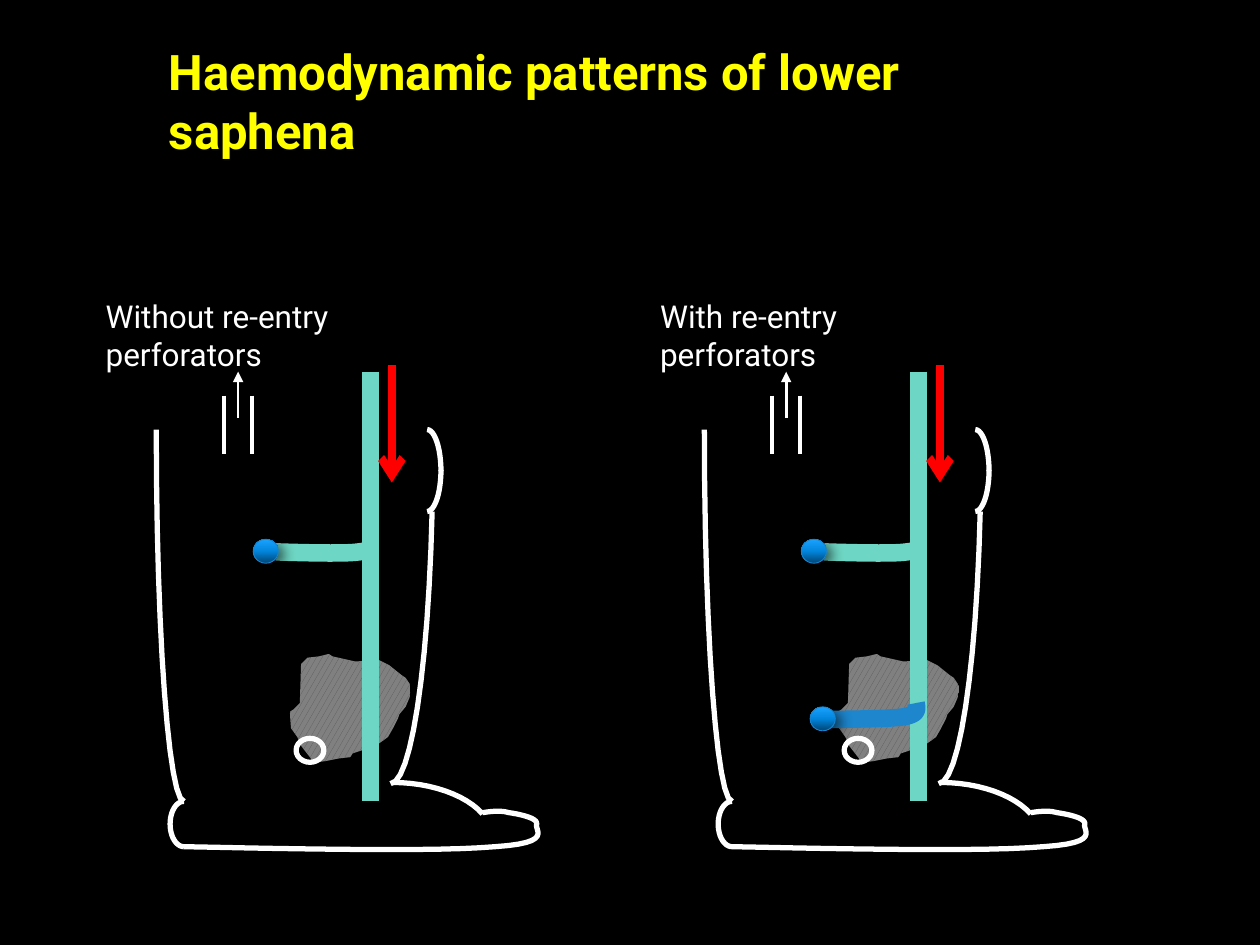
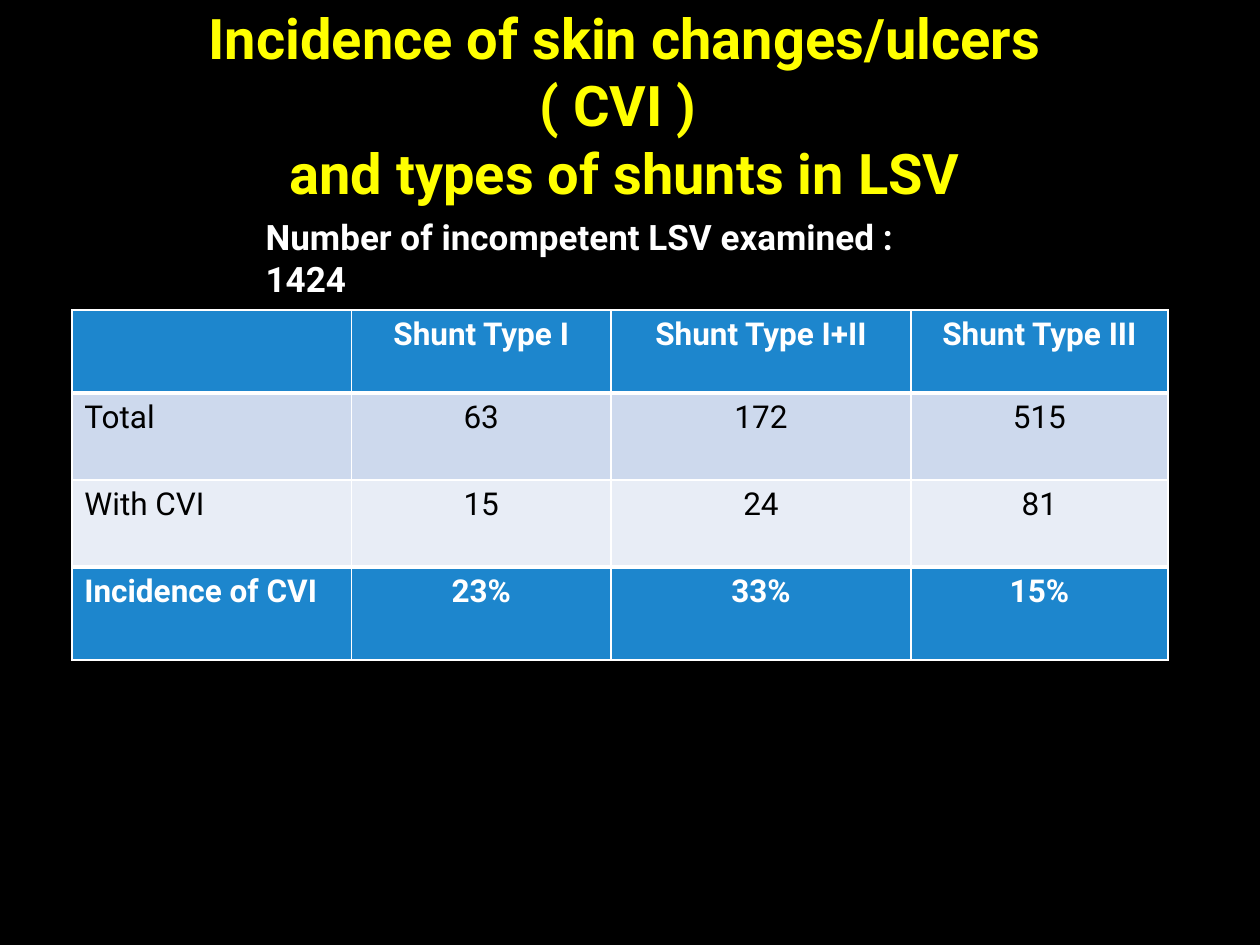
from copy import deepcopy

from lxml import etree
from pptx import Presentation
from pptx.dml.color import RGBColor
from pptx.enum.dml import MSO_PATTERN
from pptx.enum.shapes import MSO_CONNECTOR, MSO_SHAPE
from pptx.enum.text import MSO_ANCHOR, MSO_AUTO_SIZE, PP_ALIGN
from pptx.oxml.ns import qn
from pptx.util import Inches, Pt

BLACK, WHITE, YELLOW, RED = "000000", "FFFFFF", "FFFF00", "FF0000"
TEAL, BLUE = "6ED6C4", "1D86CD"
BALL_EDGE, BALL_STOPS = "1884CD", [(0, "014573"), (0.5, "0285DD"), (1, "1AA3FF")]
BAND_DARK, BAND_LIGHT = "CDD9ED", "E8EDF6"
LEG_GAP = 4.35

LEG_OUTLINES = [
    [(3.1, 6.22), (3.26, 6.22, 3.4, 5.32, 3.43, 4.06)],
    [(3.39, 3.41), (3.45, 3.41, 3.5, 3.56, 3.5, 3.74)],
    [(3.39, 4.06), (3.45, 4.06, 3.5, 3.91, 3.5, 3.73)],
    [(3.11, 6.21), (3.42, 6.21, 3.7, 6.31, 3.83, 6.46)],
    [(1.46, 6.72), (2.46, 6.74, 3.47, 6.76, 3.93, 6.72),
     (4.4, 6.69, 4.24, 6.59, 4.26, 6.54), (4.27, 6.49, 4.11, 6.46, 4.04, 6.45),
     (3.97, 6.43, 3.9, 6.44, 3.83, 6.45)],
    [(1.46, 6.36), (1.34, 6.36, 1.24, 5.04, 1.24, 3.41)],
    [(1.46, 6.36), (1.4, 6.36, 1.35, 6.44, 1.35, 6.54)],
    [(1.46, 6.72), (1.4, 6.72, 1.35, 6.64, 1.35, 6.54)],
]
SKIN_CHANGE = [
    (2.44, 5.22), (2.39, 5.27), (2.38, 5.58), (2.33, 5.63), (2.3, 5.65),
    (2.31, 5.78), (2.36, 5.85), (2.39, 5.92), (2.46, 6.01), (2.48, 6.04),
    (2.52, 6.05), (2.59, 6.04), (2.69, 6.02), (2.78, 6.01), (2.8, 5.98),
    (2.89, 5.95), (2.93, 5.92), (3.01, 5.9), (3.08, 5.85), (3.12, 5.78),
    (3.16, 5.7), (3.17, 5.67), (3.22, 5.61), (3.25, 5.54), (3.26, 5.5),
    (3.26, 5.44), (3.22, 5.38), (3.19, 5.36), (3.09, 5.28), (3.01, 5.24),
    (2.82, 5.25), (2.73, 5.23), (2.64, 5.21), (2.61, 5.19), (2.53, 5.21),
]
UPPER_BRANCH = [(2.91, 4.28), (2.94, 4.32, 2.97, 4.37, 2.85, 4.38),
                (2.73, 4.4, 2.19, 4.38, 2.19, 4.38)]
RE_ENTRY_BRANCH = [(2.92, 5.58), (2.93, 5.63, 2.94, 5.67, 2.82, 5.69),
                   (2.7, 5.71, 2.2, 5.71, 2.2, 5.71)]


def rgb(value):
    return RGBColor.from_string(value)


def inches(*values):
    return [Inches(v) for v in values]


def trace(outline, steps=12):
    points = [outline[0]]
    for segment in outline[1:]:
        if len(segment) == 2:
            points.append(segment)
            continue
        ctrl = [points[-1], segment[:2], segment[2:4], segment[4:]]
        for i in range(1, steps + 1):
            t = i / steps
            weights = ((1 - t) ** 3, 3 * t * (1 - t) ** 2, 3 * t * t * (1 - t), t ** 3)
            points.append(tuple(sum(w * c[axis] for w, c in zip(weights, ctrl))
                                for axis in (0, 1)))
    return points


class Deck:
    font = "Roboto"

    def __init__(self):
        self.prs = Presentation()
        self.prs.slide_width, self.prs.slide_height = inches(10, 7.5)
        self.dx = 0

    def slide(self):
        self.s = self.prs.slides.add_slide(self.prs.slide_layouts[5])
        fill = self.s.background.fill
        fill.solid()
        fill.fore_color.rgb = rgb(BLACK)
        self.dx = 0

    def put_lines(self, tf, lines, size, color, bold=False, align=PP_ALIGN.LEFT):
        style = {"name": self.font, "size": Pt(size), "bold": bold}
        for i, line in enumerate(lines):
            p = tf.paragraphs[0] if i == 0 else tf.add_paragraph()
            p.alignment = align
            r = p.add_run()
            r.text = line
            for key, value in style.items():
                setattr(r.font, key, value)
            r.font.color.rgb = rgb(color)

    def frame(self, sp, box, lines, **style):
        sp.left, sp.top, sp.width, sp.height = inches(*box)
        tf = sp.text_frame
        for key, value in {"word_wrap": True, "auto_size": MSO_AUTO_SIZE.NONE,
                           "vertical_anchor": MSO_ANCHOR.TOP}.items():
            setattr(tf, key, value)
        self.put_lines(tf, lines, **style)

    def title(self, box, lines, size, align=PP_ALIGN.LEFT):
        self.frame(self.s.shapes.title, box, lines, size=size, color=YELLOW,
                   bold=True, align=align)

    def text(self, box, line, size, bold=False):
        sp = self.s.shapes.add_textbox(*inches(*box))
        self.frame(sp, box, [line], size=size, color=WHITE, bold=bold)

    def stroke(self, sp, color, width):
        sp.line.color.rgb = rgb(color)
        sp.line.width = Pt(width)

    def freeform(self, outline, closed=False):
        points = [inches(x + self.dx, y) for x, y in trace(outline)]
        builder = self.s.shapes.build_freeform(*points[0])
        builder.add_line_segments(points[1:], close=closed)
        sp = builder.convert_to_shape()
        sp.shadow.inherit = False
        return sp

    def curve(self, outline, color, width):
        sp = self.freeform(outline)
        sp.fill.background()
        self.stroke(sp, color, width)

    def patch(self, outline):
        sp = self.freeform(outline, closed=True)
        sp.fill.patterned()
        sp.fill.pattern = MSO_PATTERN.LARGE_CONFETTI
        sp.fill.fore_color.rgb = rgb("595959")
        sp.fill.back_color.rgb = rgb("808080")
        sp.line.fill.background()

    def line(self, x1, y1, x2, y2, color, width, **ends):
        sp = self.s.shapes.add_connector(
            MSO_CONNECTOR.STRAIGHT, *inches(x1 + self.dx, y1, x2 + self.dx, y2))
        self.stroke(sp, color, width)
        spPr = sp._element.spPr
        for end, kind in ends.items():
            etree.SubElement(spPr.find(qn("a:ln")), qn(f"a:{end}End"), type=kind)
        etree.SubElement(spPr, qn("a:effectLst"))

    def oval(self, x, y, w, h, color, width):
        sp = self.s.shapes.add_shape(MSO_SHAPE.OVAL, *inches(x + self.dx, y, w, h))
        sp.shadow.inherit = False
        sp.fill.background()
        self.stroke(sp, color, width)
        return sp

    def ball(self, x, y):
        sp = self.oval(x, y, 0.2, 0.19, BALL_EDGE, 0.5)
        sp.fill.gradient()
        sp.fill.gradient_angle = 90
        stops = sp._element.spPr.find(qn("a:gradFill")).find(qn("a:gsLst"))
        stops.insert(1, deepcopy(stops[0]))
        for stop, (position, color) in zip(sp.fill.gradient_stops, BALL_STOPS):
            stop.position = position
            stop.color.rgb = rgb(color)
        effects = sp._element.spPr.find(qn("a:effectLst"))
        shadow = etree.SubElement(effects, qn("a:outerShdw"), blurRad=str(Pt(7)),
                                  dist=str(Pt(4)), dir=str(35 * 60000))
        shade = etree.SubElement(shadow, qn("a:srgbClr"), val=BLACK)
        etree.SubElement(shade, qn("a:alpha"), val="55000")

    def borders(self, cell, top, bottom):
        tcPr = cell._tc.get_or_add_tcPr()
        for i, (side, width) in enumerate(zip("LRTB", (1, 1, top, bottom))):
            ln = etree.Element(qn(f"a:ln{side}"), w=str(Pt(width)))
            fill = etree.SubElement(ln, qn("a:solidFill"))
            etree.SubElement(fill, qn("a:srgbClr"), val=WHITE)
            tcPr.insert(i, ln)

    def table(self, left, top, widths, heights, rows, fills):
        sp = self.s.shapes.add_table(len(rows), len(widths), *inches(
            left, top, sum(widths), sum(heights)))
        table = sp.table
        for column, width in zip(table.columns, widths):
            column.width = Inches(width)
        for row, height in zip(table.rows, heights):
            row.height = Inches(height)
        last = len(rows) - 1
        for i, (values, fill) in enumerate(zip(rows, fills)):
            strong = i in (0, last)
            for j, value in enumerate(values):
                cell = table.cell(i, j)
                cell.fill.solid()
                cell.fill.fore_color.rgb = rgb(fill)
                self.borders(cell, 3 if i in (1, last) else 1,
                             3 if i in (0, last - 1) else 1)
                if value:
                    self.put_lines(cell.text_frame, [value], 18,
                                   WHITE if strong else BLACK, strong,
                                   PP_ALIGN.CENTER if j else PP_ALIGN.LEFT)

    def leg(self, dx, re_entry):
        self.dx = dx
        self.patch(SKIN_CHANGE)
        for outline in LEG_OUTLINES:
            self.curve(outline, WHITE, 3)
        self.oval(2.35, 5.86, 0.22, 0.19, WHITE, 3)
        for x in (1.78, 2):
            self.line(x, 3.14, x, 3.6, WHITE, 2.25)
        self.line(1.89, 2.95, 1.89, 3.32, WHITE, 1.5, head="triangle")
        self.line(2.94, 2.95, 2.94, 6.36, TEAL, 10)
        self.line(3.11, 2.9, 3.11, 3.83, RED, 4.5, tail="arrow")
        self.curve(UPPER_BRANCH, TEAL, 10)
        self.ball(2.01, 4.28)
        if re_entry:
            self.curve(RE_ENTRY_BRANCH, BLUE, 10)
            self.ball(2.08, 5.61)


def main():
    deck = Deck()

    deck.slide()
    deck.title((1.24, 0.28, 7.42, 0.57), ["Haemodynamic patterns of lower saphena"], 28)
    deck.leg(0, re_entry=False)
    deck.leg(LEG_GAP, re_entry=True)
    deck.text((0.74, 2.31, 3.2, 0.4), "Without re-entry perforators", 18)
    deck.text((5.14, 2.31, 2.85, 0.4), "With re-entry perforators", 18)

    deck.slide()
    deck.title((0.92, -0.02, 8.08, 1.18),
               ["Incidence of skin changes/ulcers ( CVI ) ", "and types of shunts in LSV"],
               32, PP_ALIGN.CENTER)
    deck.table(0.57, 2.46, (2.22, 2.06, 2.38, 2.04), (0.66, 0.69, 0.69, 0.74), [
        ("", "Shunt Type I", "Shunt Type I+II", "Shunt Type III"),
        ("Total", "63", "172", "515"),
        ("With CVI", "15", "24", "81"),
        ("Incidence of CVI", "23%", "33%", "15%"),
    ], (BLUE, BAND_DARK, BAND_LIGHT, BLUE))
    deck.text((2.01, 1.66, 5.82, 0.44), "Number of incompetent LSV examined : 1424",
              20, bold=True)

    deck.prs.save("out.pptx")


if __name__ == "__main__":
    main()
